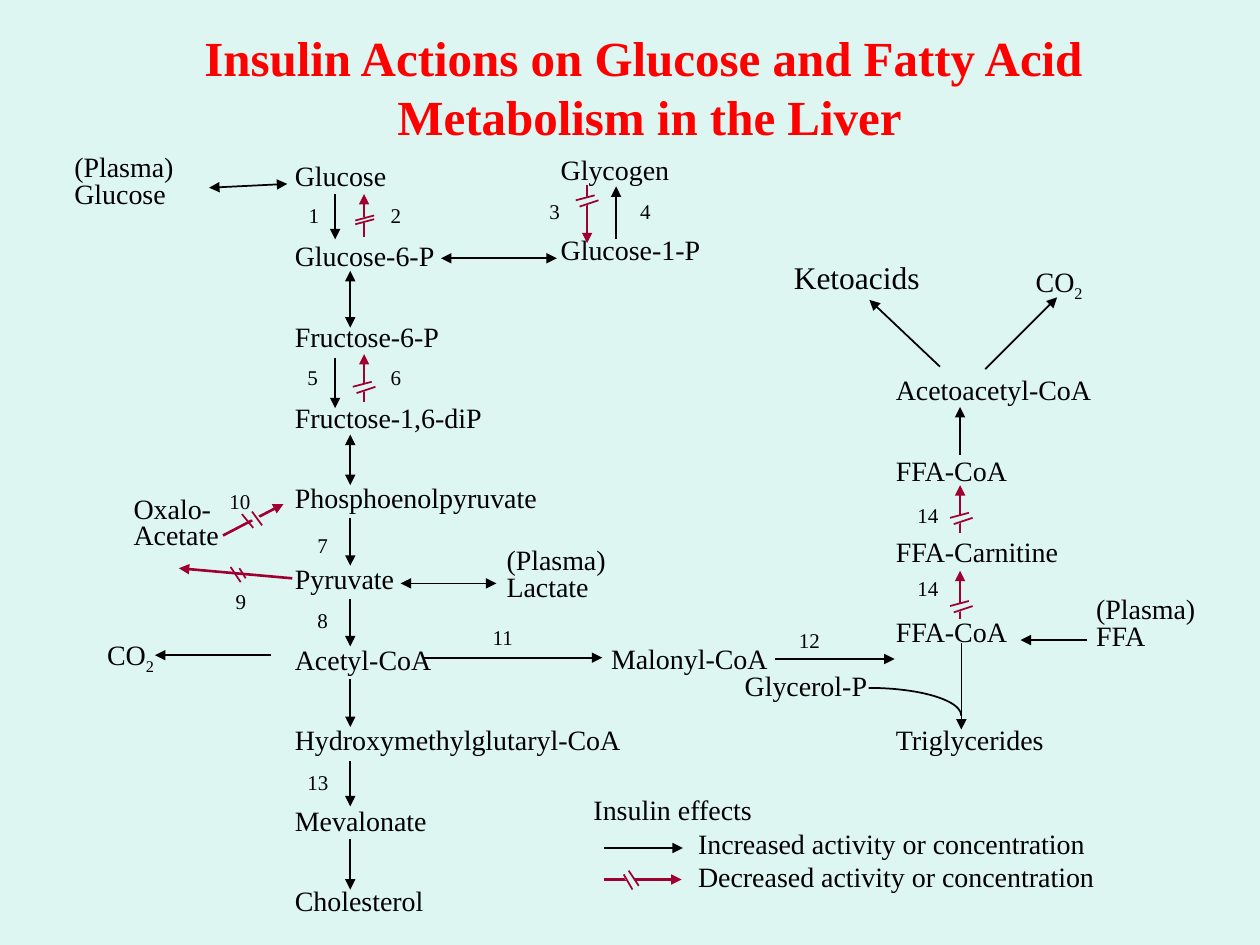
from dataclasses import dataclass

import pptx
import pptx.dml.color
import pptx.enum.shapes
import pptx.enum.text
import pptx.oxml
import pptx.oxml.ns
import pptx.util

PX = 9144
FONT = "Times New Roman"
BACKGROUND, INK, TITLE, INHIBITED = "DEF6F1", "000000", "FF0000", "9F0031"
TIGHT = 0.8
BLANK_LINE = 15.35
STEP = 2 * BLANK_LINE
LONG_STEP = 3 * BLANK_LINE


@dataclass
class Line:
    text: str
    before: float = 0
    indent: int = 0


@dataclass
class Label:
    lines: list[Line]
    box: tuple[int, int, int, int]
    size: int = 16
    spacing: float = 1.0
    wrap: bool = False


@dataclass
class Arrow:
    start: tuple[int, int]
    end: tuple[int, int]
    both: bool = False
    color: str = INK
    width: float = 1
    pointed: bool = True


@dataclass
class Break:
    center: tuple[int, int]
    slashes: list[tuple[int, int, int, int]]
    rotation: int = 63
    masked: bool = True


UPRIGHT_SLASHES = [(5, -4, -10, 0), (8, 0, -7, 5)]


def color_of(value: str) -> pptx.dml.color.RGBColor:
    """Return the colour for a hex string."""
    return pptx.dml.color.RGBColor.from_string(value)


def emu(*lengths: float) -> list[pptx.util.Emu]:
    """Turn px lengths into EMU."""
    return [pptx.util.Emu(round(length * PX)) for length in lengths]


def style_font(font, size: int, color: str, bold: bool = False) -> None:
    """Set the typeface, size, weight and colour."""
    font.name, font.size, font.bold = FONT, pptx.util.Pt(size), bold
    font.color.rgb = color_of(color)


def add_label(slide, label: Label) -> None:
    """Draw a text box; an underscore starts a subscript."""
    frame = slide.shapes.add_textbox(*emu(*label.box)).text_frame
    frame.margin_left, frame.margin_right = emu(9, 9)
    frame.word_wrap = label.wrap
    frame.auto_size = pptx.enum.text.MSO_AUTO_SIZE.SHAPE_TO_FIT_TEXT
    for index, line in enumerate(label.lines):
        paragraph = frame.add_paragraph() if index else frame.paragraphs[0]
        paragraph.line_spacing = label.spacing
        if line.before:
            paragraph.space_before = pptx.util.Pt(line.before)
        if line.indent:
            properties = paragraph._p.get_or_add_pPr()
            properties.set("marL", str(line.indent * PX))
            properties.set("indent", "0")
        style_font(paragraph.font, label.size, INK)
        for position, text in enumerate(line.text.split("_")):
            run = paragraph.add_run()
            run.text = text
            if position:
                run._r.get_or_add_rPr().set("baseline", "-25000")


def add_arrow(slide, arrow: Arrow) -> None:
    """Draw a straight line with its arrowheads."""
    connector = slide.shapes.add_connector(
        pptx.enum.shapes.MSO_CONNECTOR.STRAIGHT, *emu(*arrow.start, *arrow.end))
    connector.line.color.rgb = color_of(arrow.color)
    connector.line.width = pptx.util.Pt(arrow.width)
    properties = connector._element.spPr
    outline = connector.line._get_or_add_ln()
    ends = ["a:headEnd"] * arrow.both + ["a:tailEnd"] * arrow.pointed
    for end in ends:
        element = pptx.oxml.xmlchemy.OxmlElement(end)
        element.set("type", "triangle")
        outline.append(element)
    properties.append(pptx.oxml.xmlchemy.OxmlElement("a:effectLst"))


def add_break(slide, mark: Break) -> None:
    """Draw the gap and the two slashes across an inhibited arrow."""
    x, y = mark.center
    if mark.masked:
        mask = slide.shapes.add_shape(
            pptx.enum.shapes.MSO_SHAPE.RECTANGLE, *emu(x - 3, y - 8, 6, 16))
        mask.rotation = mark.rotation
        mask.shadow.inherit = False
        mask.fill.solid()
        mask.fill.fore_color.rgb = color_of(BACKGROUND)
        mask.line.fill.background()
    for x1, y1, x2, y2 in mark.slashes:
        add_arrow(slide, Arrow((x + x1, y + y1), (x + x2, y + y2),
                               color=INHIBITED, pointed=False))


def add_title(slide) -> None:
    """Fill and place the title placeholder."""
    title = slide.shapes.title
    title.left, title.top, title.width, title.height = emu(150, 17, 731, 103)
    frame = title.text_frame
    frame.text = "Insulin Actions on Glucose and Fatty Acid \nMetabolism in the Liver"
    frame.word_wrap = False
    frame.auto_size = pptx.enum.text.MSO_AUTO_SIZE.NONE
    frame.vertical_anchor = pptx.enum.text.MSO_ANCHOR.TOP
    for paragraph in frame.paragraphs:
        paragraph.alignment = pptx.enum.text.PP_ALIGN.CENTER
        style_font(paragraph.font, 28, TITLE, True)


def add_curve(slide) -> None:
    """Draw the quarter arc that joins Glycerol-P to the triglyceride arrow."""
    arc = slide.shapes.add_shape(pptx.enum.shapes.MSO_SHAPE.ARC, *emu(616, 546, 147, 44))
    arc.shadow.inherit = False
    arc.fill.background()
    arc.line.color.rgb = color_of(INK)
    arc.line.width = pptx.util.Pt(1)


PATHWAY = ["Glucose", "Glucose-6-P", "Fructose-6-P", "Fructose-1,6-diP",
           "Phosphoenolpyruvate", "Pyruvate", "Acetyl-CoA",
           "Hydroxymethylglutaryl-CoA", "Mevalonate", "Cholesterol"]
LABELS = [
    Label([Line(name, STEP if index else 0) for index, name in enumerate(PATHWAY)],
          (225, 126, 278, 607), spacing=TIGHT),
    Label([Line("CO_2", indent=111), Line("Acetoacetyl-CoA", LONG_STEP),
           Line("FFA-CoA", STEP), Line("FFA-Carnitine", STEP), Line("FFA-CoA", STEP),
           Line("Triglycerides", LONG_STEP)], (702, 208, 176, 397), spacing=TIGHT),
    Label([Line("Glycogen"), Line("Glucose-1-P", STEP)], (436, 121, 131, 95), spacing=TIGHT),
    Label([Line("(Plasma)"), Line("Glucose")], (50, 119, 97, 52), spacing=TIGHT),
    Label([Line("(Plasma)"), Line("Lactate")], (393, 431, 98, 52), spacing=TIGHT),
    Label([Line("Oxalo-"), Line("Acetate")], (97, 390, 111, 52), spacing=TIGHT, wrap=True),
    Label([Line("(Plasma)"), Line("FFA")], (861, 470, 97, 52), spacing=TIGHT),
    Label([Line("Malonyl-CoA")], (476, 504, 144, 36)),
    Label([Line("Glycerol-P")], (582, 526, 117, 36)),
    Label([Line("CO_2")], (76, 501, 56, 36)),
    Label([Line("Ketoacids")], (621, 200, 119, 40), size=18),
    Label([Line("Insulin effects"), Line("Increased activity or concentration", indent=83),
           Line("Decreased activity or concentration", indent=83)], (462, 624, 418, 89)),
]
STEP_NUMBERS = [
    (1, 236, 156), (2, 301, 156), (3, 427, 153), (4, 499, 153), (5, 235, 284),
    (6, 301, 284), (7, 243, 418), (8, 243, 477), (9, 178, 462), (10, 173, 383),
    (11, 382, 491), (12, 625, 493), (13, 235, 606), (14, 719, 394), (14, 719, 452),
]
INCREASED = [
    ((762, 361), (762, 323)), ((782, 293), (839, 236)), ((746, 291), (690, 238)),
    ((278, 411), (278, 449)), ((278, 475), (278, 513)), ((278, 539), (278, 577)),
    ((278, 604), (278, 640)), ((278, 666), (278, 706)), ((336, 522), (478, 522)),
    ((615, 523), (710, 523)), ((863, 508), (810, 508)), ((215, 520), (123, 520)),
    ((479, 673), (542, 673)), ((266, 154), (266, 190)), ((489, 190), (489, 148)),
    ((266, 284), (266, 324)), ((763, 510), (763, 579)),
]
REVERSIBLE = [
    ((278, 215), (278, 260)), ((278, 345), (278, 385)), ((350, 205), (442, 205)),
    ((228, 146), (166, 149)), ((318, 463), (394, 463)),
]
DECREASED = [
    ((177, 425), (225, 400)), ((232, 459), (142, 451)), ((479, 698), (541, 698)),
    ((466, 147), (466, 193)), ((289, 319), (289, 281)), ((762, 491), (762, 453)),
    ((762, 423), (762, 385)), ((289, 172), (289, 154)),
]
BREAKS = [Break(center, UPRIGHT_SLASHES)
          for center in ((467, 159), (290, 307), (764, 481), (764, 411))] + [
    Break((200, 408), [(-8, 0, 1, 11), (0, -2, 8, 9)], 319),
    Break((500, 698), [(-5, -4, 2, 8), (-1, -7, 7, 5)], 326),
    Break((189, 456), [(-6, -6, 2, 6), (1, -5, 6, 3)], masked=False),
    Break((289, 174), [(8, -3, -7, 1), (8, 0, -7, 4)], masked=False),
]


def main() -> None:
    """Build and save the slide."""
    presentation = pptx.Presentation()
    presentation.slide_width, presentation.slide_height = emu(1000, 750)
    slide = presentation.slides.add_slide(presentation.slide_layouts[5])
    slide.background.fill.solid()
    slide.background.fill.fore_color.rgb = color_of(BACKGROUND)
    add_title(slide)
    arrows = [Arrow(*ends) for ends in INCREASED]
    arrows += [Arrow(*ends, both=True) for ends in REVERSIBLE]
    arrows += [Arrow(*ends, color=INHIBITED, width=1.5) for ends in DECREASED]
    arrows.append(Arrow((289, 177), (289, 188), color=INHIBITED, width=1.5, pointed=False))
    for arrow in arrows:
        add_arrow(slide, arrow)
    add_curve(slide)
    for mark in BREAKS:
        add_break(slide, mark)
    numbers = [Label([Line(str(number))], (x, y, 27 if number < 10 else 35, 29), size=12)
               for number, x, y in STEP_NUMBERS]
    for label in LABELS + numbers:
        add_label(slide, label)
    presentation.save("out.pptx")


if __name__ == "__main__":
    main()
